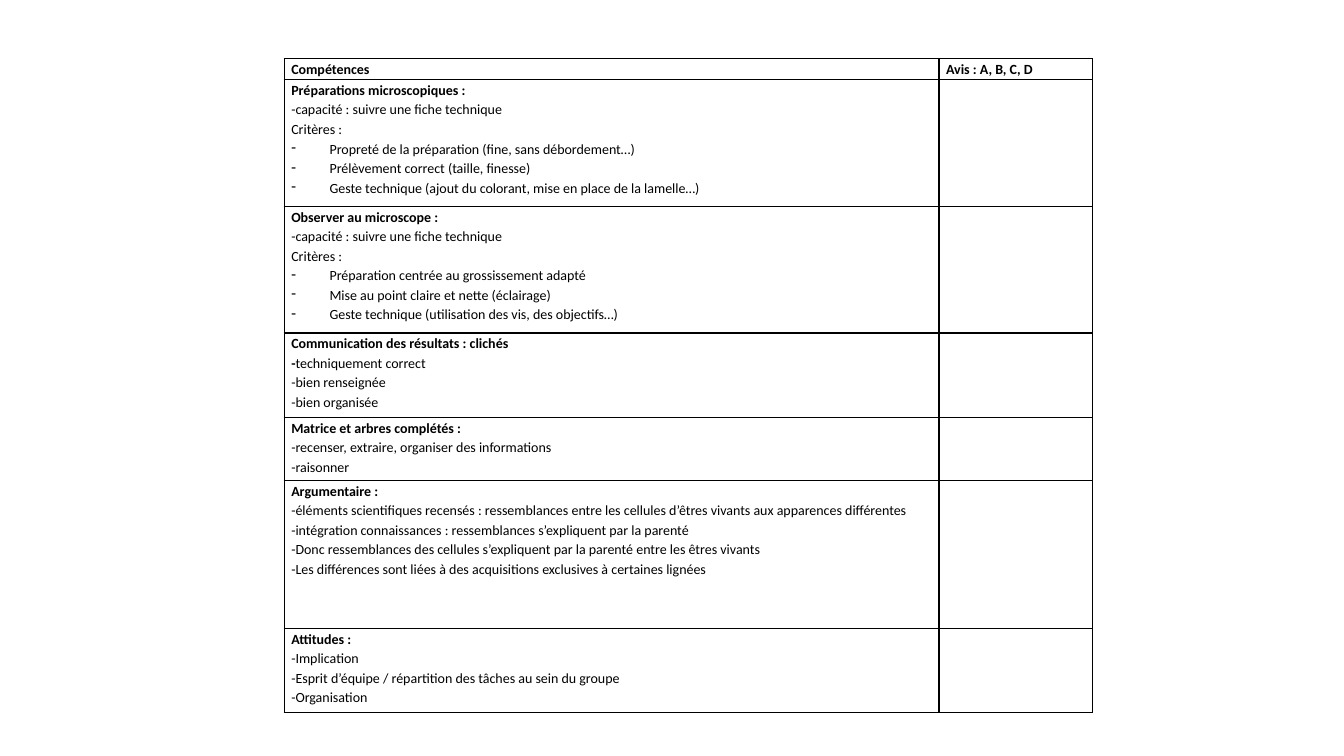
import dataclasses

import lxml.etree
import pptx
import pptx.dml.color
import pptx.oxml
import pptx.oxml.ns
import pptx.util


@dataclasses.dataclass(frozen=True)
class Theme:
    font: str = "Calibri"
    size: float = 10
    ink: str = "000000"
    border: float = 1
    spacing: float = 1.15
    indent: float = 0.38
    margin: float = 0.07


THEME = Theme()
PAGE_WIDTH = pptx.util.Inches(13.33)
PAGE_HEIGHT = pptx.util.Inches(7.5)
TABLE_BOX = (0.2115, 0.0775, 0.6015, 0.8655)
COLUMN_SHARES = (0.81, 0.19)
BULLET = "• "

HEADER = ("**Compétences**", "**Avis : A, B, C, D**")
SKILLS = [
    (6, [
        "**Préparations microscopiques :**",
        "-capacité : suivre une fiche technique",
        "Critères :",
        "• Propreté de la préparation (fine, sans débordement…)",
        "• Prélèvement correct (taille, finesse)",
        "• Geste technique (ajout du colorant, mise en place de la lamelle…)",
    ]),
    (6, [
        "**Observer au microscope :**",
        "-capacité : suivre une fiche technique",
        "Critères :",
        "• Préparation centrée au grossissement adapté",
        "• Mise au point claire et nette (éclairage)",
        "• Geste technique (utilisation des vis, des objectifs…)",
    ]),
    (4, [
        "**Communication des résultats : clichés**",
        "**-**techniquement correct",
        "-bien renseignée",
        "-bien organisée",
    ]),
    (3, [
        "**Matrice et arbres complétés :**",
        "-recenser, extraire, organiser des informations",
        "-raisonner",
    ]),
    (7, [
        "**Argumentaire :**",
        "-éléments scientifiques recensés : ressemblances entre les cellules "
        "d’êtres vivants aux apparences différentes",
        "-intégration connaissances : ressemblances s’expliquent par la parenté",
        "-Donc ressemblances des cellules s’expliquent par la parenté entre les êtres vivants",
        "-Les différences sont liées à des acquisitions exclusives à certaines lignées",
    ]),
    (4, [
        "**Attitudes :**",
        "-Implication",
        "-Esprit d’équipe / répartition des tâches au sein du groupe",
        "-Organisation",
    ]),
]


def apply_format(target, values):
    for name, value in values.items():
        setattr(target, name, value)


def add_bullet(para):
    properties = para._p.get_or_add_pPr()
    indent = pptx.util.Inches(THEME.indent)
    properties.set("marL", str(indent))
    properties.set("indent", str(-indent))
    bullet = lxml.etree.SubElement(properties, pptx.oxml.ns.qn("a:buChar"))
    bullet.set("char", "-")


def write_line(para, line):
    para.line_spacing = THEME.spacing
    if line.startswith(BULLET):
        add_bullet(para)
        line = line.removeprefix(BULLET)
    for index, text in enumerate(line.split("**")):
        if text:
            span = para.add_run()
            span.text = text
            apply_format(span.font, {
                "name": THEME.font,
                "size": pptx.util.Pt(THEME.size),
                "bold": index % 2 == 1,
            })
            span.font.color.rgb = pptx.dml.color.RGBColor.from_string(THEME.ink)


def draw_borders(cell):
    properties = cell._tc.get_or_add_tcPr()
    for side in ("lnL", "lnR", "lnT", "lnB"):
        properties.append(pptx.oxml.parse_xml(
            f'<a:{side} {pptx.oxml.ns.nsdecls("a")} w="{pptx.util.Pt(THEME.border)}">'
            f'<a:solidFill><a:srgbClr val="{THEME.ink}"/></a:solidFill></a:{side}>'
        ))


def fill_cell(cell, lines):
    margin = pptx.util.Inches(THEME.margin)
    apply_format(cell, {
        "margin_left": margin,
        "margin_right": margin,
        "margin_top": 0,
        "margin_bottom": 0,
    })
    draw_borders(cell)
    cell.fill.background()
    for index, line in enumerate(lines):
        frame = cell.text_frame
        write_line(frame.add_paragraph() if index else frame.paragraphs[0], line)


def add_skills_table(page, box):
    left, top, width, height = box
    rows = [(1, [[title] for title in HEADER])]
    rows += [(units, [lines, []]) for units, lines in SKILLS]
    total = sum(units for units, _ in rows)
    table = page.shapes.add_table(len(rows), len(HEADER), left, top, width, height).table
    apply_format(table, {"first_row": False, "horz_banding": False})
    for column, share in zip(table.columns, COLUMN_SHARES):
        column.width = round(width * share)
    for row, (units, contents) in zip(table.rows, rows):
        row.height = round(height * units / total)
        for cell, lines in zip(row.cells, contents):
            fill_cell(cell, lines)


def main():
    deck = pptx.Presentation()
    apply_format(deck, {"slide_width": PAGE_WIDTH, "slide_height": PAGE_HEIGHT})
    page = deck.slides.add_slide(deck.slide_layouts[6])
    lengths = (PAGE_WIDTH, PAGE_HEIGHT) * 2
    add_skills_table(page, [round(length * share) for length, share in zip(lengths, TABLE_BOX)])
    deck.save("out.pptx")


if __name__ == "__main__":
    main()
